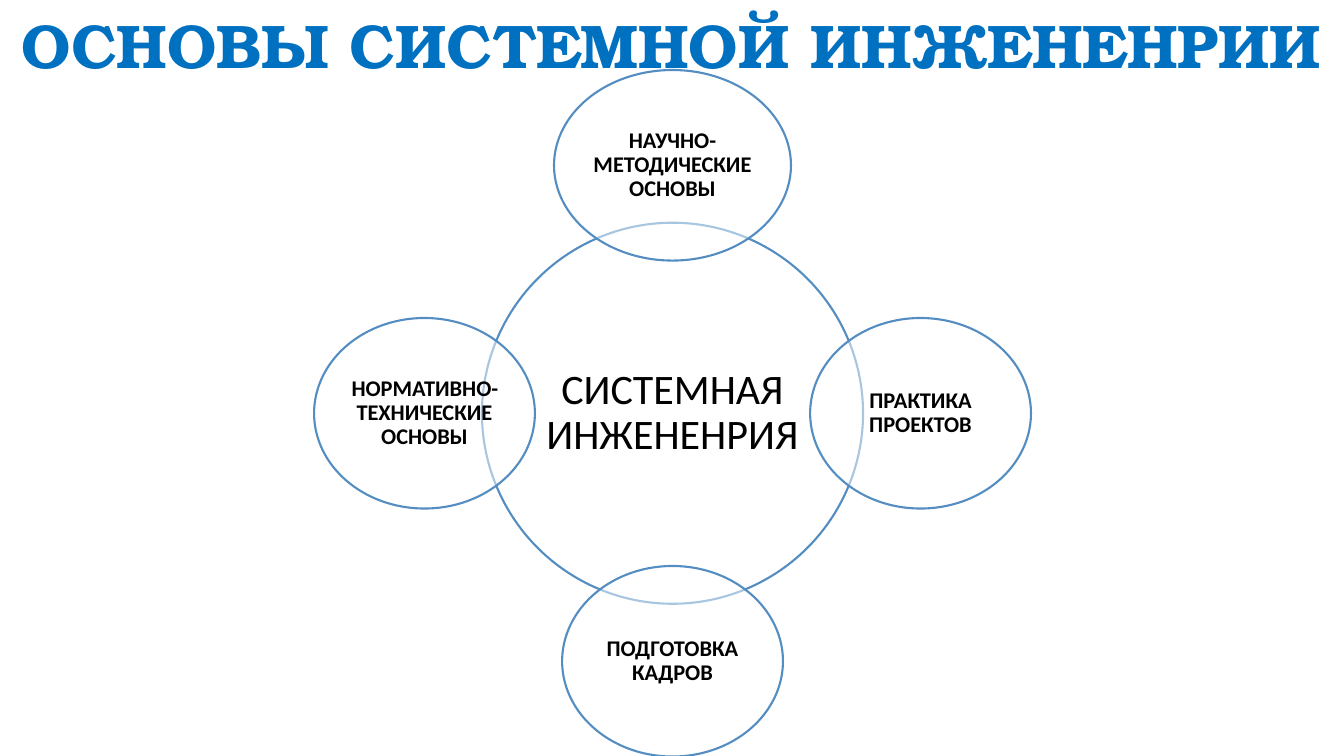
from dataclasses import dataclass

from pptx import Presentation
from pptx.dml.color import RGBColor as RGB
from pptx.enum.shapes import MSO_SHAPE as Shape
from pptx.enum.text import MSO_ANCHOR as Anchor, MSO_AUTO_SIZE as Fit, PP_ALIGN as Align
from pptx.oxml.ns import qn
from pptx.util import Inches, Pt
from lxml import etree


@dataclass(frozen=True)
class Theme:
    head: RGB = RGB(0x00, 0x70, 0xC0)
    line: RGB = RGB(0x53, 0x8D, 0xC1)
    fill: RGB = RGB(0xFF, 0xFF, 0xFF)
    ink: RGB = RGB(0x00, 0x00, 0x00)
    serif: str = "TeX Gyre Bonum"
    sans: str = "Calibri"
    big: int = 44
    mid: int = 30
    small: int = 16


theme = Theme()


def write(frame, text, font, size, color, bold):
    frame.word_wrap = True
    frame.auto_size = Fit.NONE
    frame.vertical_anchor = Anchor.MIDDLE
    para = frame.paragraphs[0]
    para.alignment = Align.CENTER
    para.line_spacing = 0.9
    run = para.add_run()
    run.text = text
    run.font.name = font
    run.font.size = Pt(size)
    run.font.bold = bold
    run.font.color.rgb = color


def add_ring(slide, mid_x, mid_y, width, height, text, size, bold, inset):
    """Add a half-transparent ellipse around a centre point."""
    ring = slide.shapes.add_shape(
        Shape.OVAL, Inches(mid_x - width / 2), Inches(mid_y - height / 2),
        Inches(width), Inches(height))
    ring.shadow.inherit = False
    ring.fill.solid()
    ring.fill.fore_color.rgb = theme.fill
    tint = ring.fill._xPr.find(qn("a:solidFill"))[0]
    etree.SubElement(tint, qn("a:alpha"), val="50000")
    ring.line.color.rgb = theme.line
    ring.line.width = Pt(1.5)
    frame = ring.text_frame
    frame.margin_left = frame.margin_right = Inches(inset)
    frame.margin_top = frame.margin_bottom = Inches(inset)
    write(frame, text, theme.sans, size, theme.ink, bold)


deck = Presentation()
deck.slide_width = Inches(13.33)
deck.slide_height = Inches(7.5)
slide = deck.slides.add_slide(deck.slide_layouts[5])

title = slide.shapes.title
title.left, title.top = Inches(0), Inches(0.03)
title.width, title.height = Inches(13.33), Inches(0.9)
write(title.text_frame, "ОСНОВЫ СИСТЕМНОЙ ИНЖЕНЕНРИИ",
      theme.serif, theme.big, theme.head, True)

# The hub sits in the middle, with one ring on each side of it
hub_x, hub_y, hub_size = 6.67, 4.1, 3.78
reach = 2.46
add_ring(slide, hub_x, hub_y, hub_size, hub_size,
         "СИСТЕМНАЯ ИНЖЕНЕНРИЯ", theme.mid, False, 0.04)

rings = [
    (0, -1, 2.35, "НАУЧНО-МЕТОДИЧЕСКИЕ ОСНОВЫ"),
    (1, 0, 2.19, "ПРАКТИКА ПРОЕКТОВ"),
    (0, 1, 2.19, "ПОДГОТОВКА КАДРОВ"),
    (-1, 0, 2.19, "НОРМАТИВНО-ТЕХНИЧЕСКИЕ ОСНОВЫ"),
]
for step_x, step_y, width, text in rings:
    add_ring(slide, hub_x + step_x * reach, hub_y + step_y * reach,
             width, hub_size / 2, text, theme.small, True, 0.02)

deck.save("out.pptx")
